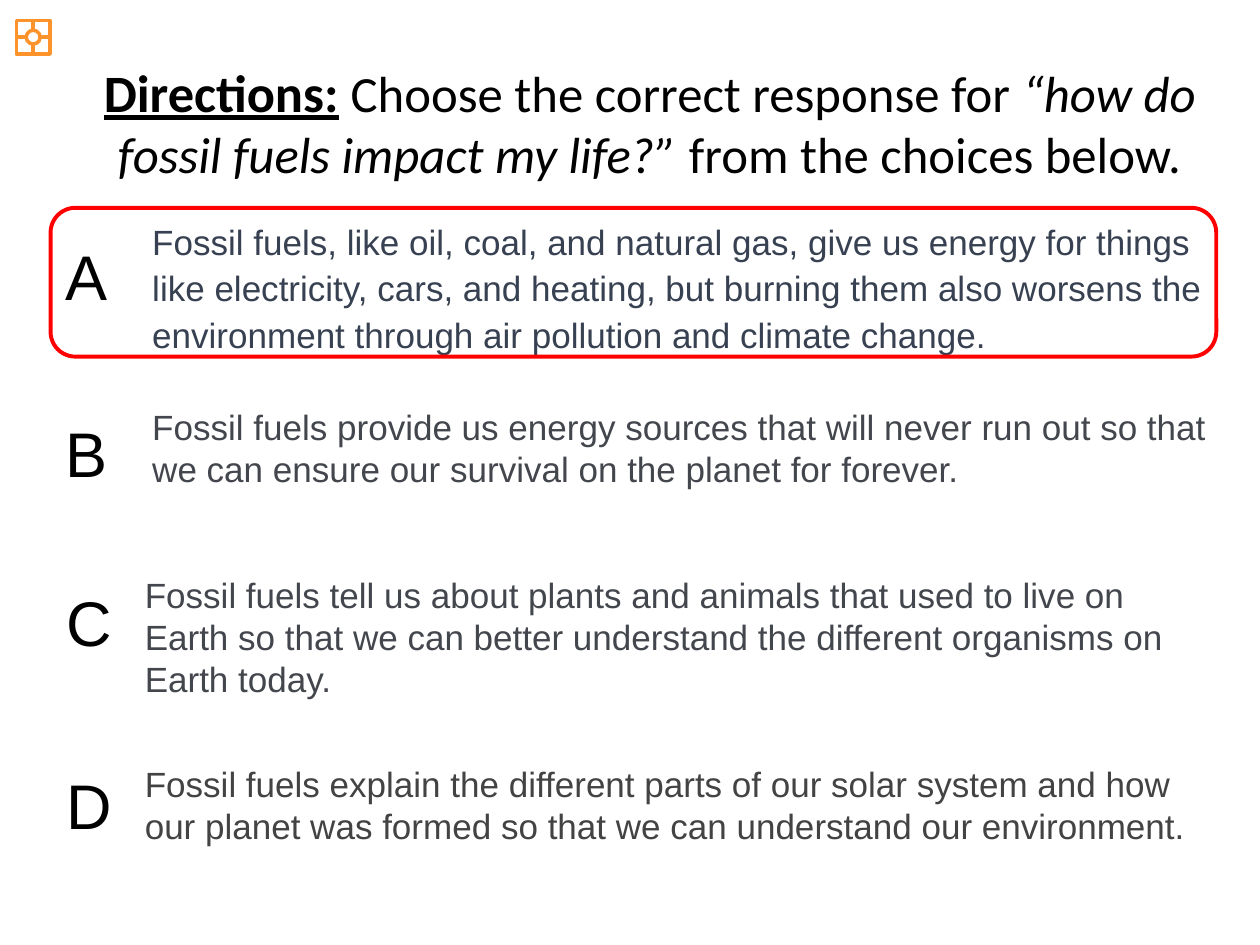
from pptx import Presentation
from pptx import util as u
from pptx.dml.color import RGBColor
from pptx.enum import shapes as es, text as et
from pptx.oxml.ns import qn
from lxml import etree

BLACK = RGBColor(0x00, 0x00, 0x00)
WHITE = RGBColor(0xFF, 0xFF, 0xFF)
ORANGE = RGBColor(0xFF, 0x93, 0x2B)
RED = RGBColor(0xFF, 0x00, 0x00)
SLATE = RGBColor(0x37, 0x41, 0x51)
GREY = RGBColor(0x43, 0x46, 0x4D)
DARK = RGBColor(0x43, 0x43, 0x43)

CHOICES = [
    ("A", 1.07, 4.67, 1.37, 2.82, 4.24, 21.87, 3.0, SLATE, 1.1,
     "Fossil fuels, like oil, coal, and natural gas, give us energy for things "
     "like electricity, cars, and heating, but burning them also worsens the "
     "environment through air pollution and climate change."),
    ("B", 1.07, 8.23, 1.37, 2.82, 8.05, 21.87, 1.96, GREY, None,
     "Fossil fuels provide us energy sources that will never run out so that "
     "we can ensure our survival on the planet for forever."),
    ("C", 1.09, 11.63, 1.45, 2.67, 11.43, 22.15, 2.82, GREY, None,
     "Fossil fuels tell us about plants and animals that used to live on Earth "
     "so that we can better understand the different organisms on Earth today."),
    ("D", 1.09, 15.32, 1.45, 2.67, 15.24, 21.87, 1.96, DARK, None,
     "Fossil fuels explain the different parts of our solar system and how our "
     "planet was formed so that we can understand our environment."),
]


def add_text(slide, x, y, w, h):
    """Add a wrapping text box and return its first paragraph."""
    frame = slide.shapes.add_textbox(u.Cm(x), u.Cm(y), u.Cm(w), u.Cm(h)).text_frame
    frame.word_wrap = True
    frame.auto_size = et.MSO_AUTO_SIZE.SHAPE_TO_FIT_TEXT
    return frame.paragraphs[0]


def add_run(para, words, size, face="Arial", color=BLACK, bold=None, under=None, slant=None):
    """Append one styled run to a paragraph."""
    run = para.add_run()
    run.text = words
    font = run.font
    font.size, font.name, font.color.rgb = u.Pt(size), face, color
    font.bold, font.underline, font.italic = bold, under, slant


def add_frame(slide, kind, x, y, w, h, color, width, fill=None):
    """Add an outlined shape, hollow unless a fill is given."""
    shape = slide.shapes.add_shape(kind, u.Cm(x), u.Cm(y), u.Cm(w), u.Cm(h))
    shape.shadow.inherit = False
    shape.line.color.rgb, shape.line.width = color, u.Pt(width)
    if fill is None:
        shape.fill.background()
    else:
        shape.fill.solid()
        shape.fill.fore_color.rgb = fill
    return shape


def add_spoke(slide, box, side, x, y):
    """Join the middle of a box side to a point."""
    line = slide.shapes.add_connector(
        es.MSO_CONNECTOR.STRAIGHT, u.Cm(x), u.Cm(y), u.Cm(x), u.Cm(y))
    line.begin_connect(box, side)
    line.line.color.rgb, line.line.width = ORANGE, u.Pt(2)
    etree.SubElement(line._element.spPr, qn("a:effectLst"))


def add_icon(slide, x, y, size, hub):
    """Draw a square with four spokes that meet a round hub."""
    kind = es.MSO_SHAPE
    box = add_frame(slide, kind.RECTANGLE, x, y, size, size, ORANGE, 2)
    mid_x, mid_y, rad = x + size / 2, y + size / 2, hub / 2
    for side, (dx, dy) in enumerate([(0, -1), (-1, 0), (0, 1), (1, 0)]):
        add_spoke(slide, box, side, mid_x + dx * rad, mid_y + dy * rad)
    add_frame(slide, kind.OVAL, mid_x - rad, mid_y - rad, hub, hub, ORANGE, 2, WHITE)


def add_title(slide):
    """Add the centred directions."""
    para = add_text(slide, 1.35, 1.09, 23.5, 2.77)
    para.alignment = et.PP_ALIGN.CENTER
    add_run(para, "Directions:", 30, "Calibri", bold=True, under=True)
    add_run(para, " ", 30, "Calibri", bold=True)
    add_run(para, "Choose the correct response for ", 29, "Calibri")
    add_run(para, "“how do fossil fuels impact my life?” ", 29, "Calibri", slant=True)
    add_run(para, "from the choices below.", 29, "Calibri")


def add_choice(slide, mark, mx, my, mw, x, y, w, h, color, space, words):
    """Add one answer with its letter."""
    add_run(add_text(slide, mx, my, mw, 1.8), mark, 36)
    para = add_text(slide, x, y, w, h)
    para.line_spacing = space
    add_run(para, words, 20, color=color)


def main():
    """Build and save the quiz slide."""
    deck = Presentation()
    deck.slide_width, deck.slide_height = u.Cm(25.4), u.Cm(19.05)
    slide = deck.slides.add_slide(deck.slide_layouts[6])
    add_icon(slide, 0.33, 0.41, 0.68, 0.28)
    add_title(slide)
    for choice in CHOICES:
        add_choice(slide, *choice)
    add_frame(slide, es.MSO_SHAPE.ROUNDED_RECTANGLE, 1.02, 4.19, 23.5, 3.0, RED, 2.25)
    deck.save("out.pptx")


if __name__ == "__main__":
    main()
